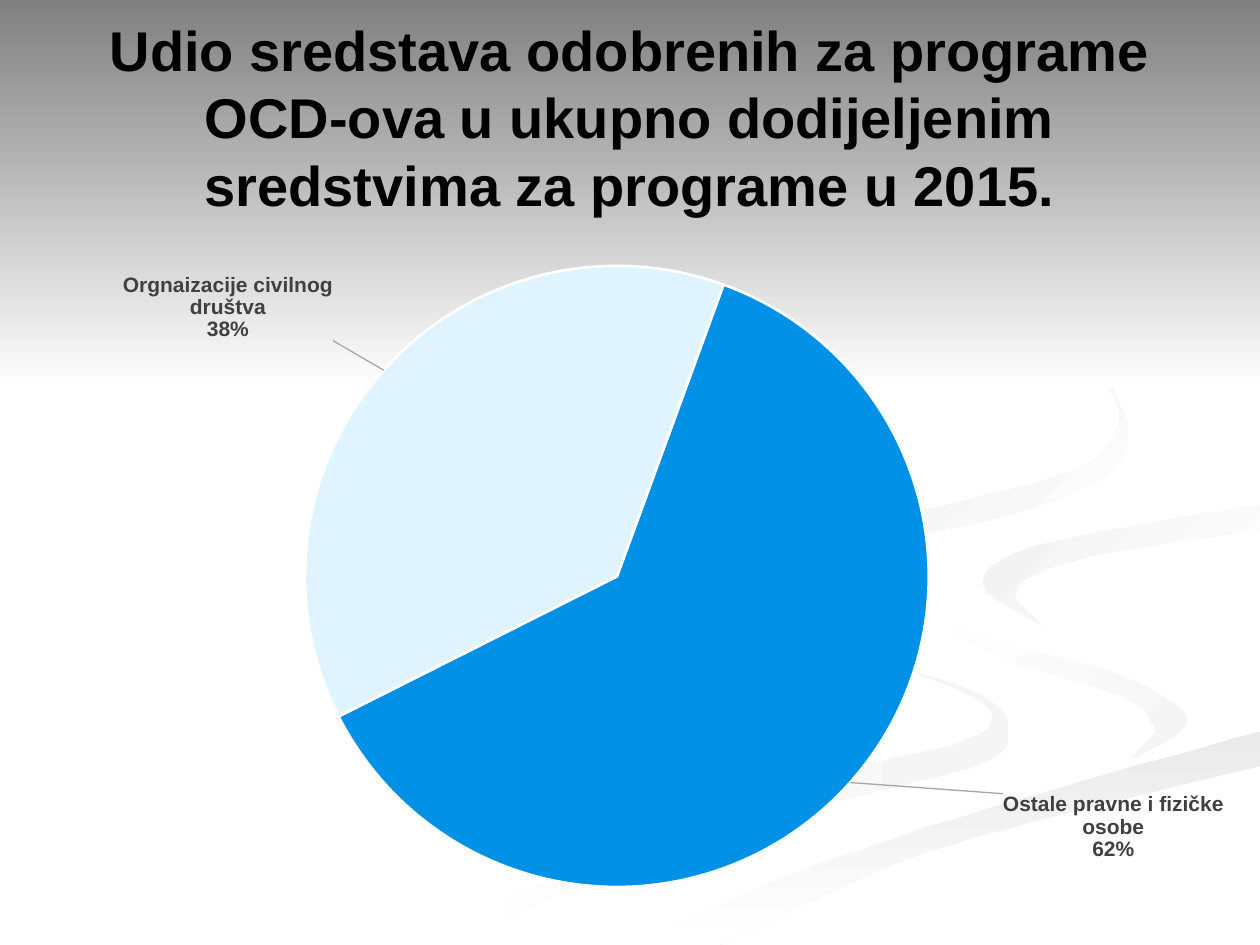
import pptx
import pptx.chart.data
import pptx.dml.color
import pptx.enum.chart
import pptx.enum.text
import pptx.oxml
import pptx.oxml.ns
import pptx.util

Pt = pptx.util.Pt
RGBColor = pptx.dml.color.RGBColor
qn = pptx.oxml.ns.qn

BLACK = RGBColor(0x00, 0x00, 0x00)
WHITE = RGBColor(0xFF, 0xFF, 0xFF)
HEADER_GREY = RGBColor(0x80, 0x80, 0x80)
LABEL_GREY = RGBColor(0x40, 0x40, 0x40)
MIST = RGBColor(0xF5, 0xF5, 0xF5)
SILVER = RGBColor(0xEA, 0xEA, 0xEA)
PEARL = RGBColor(0xF1, 0xF1, 0xF1)
ASH = RGBColor(0xED, 0xED, 0xED)
BLUE = RGBColor(0x00, 0x90, 0xE6)
PALE_BLUE = RGBColor(0xE0, 0xF4, 0xFF)

PAGE_WIDTH, PAGE_HEIGHT, HEADER_HEIGHT = 720, 540, 222

TITLE = ("Udio sredstava odobrenih za programe OCD-ova u ukupno "
         "dodijeljenim sredstvima za programe u 2015.")

# Category, share, slice colour, label shift as a fraction of the chart
SHARES = [
    ("Ostale pravne i fizičke osobe", 62, BLUE, (0.13, 0.01)),
    ("Orgnaizacije civilnog društva", 38, PALE_BLUE, (-0.04, -0.04)),
]

# Background ribbons, back to front: first colour, last colour, angle, smooth edges
RIBBONS = [
    (WHITE, MIST, 0, [
        [(414, 330), (440, 359), (524, 385), (565, 405), (552, 423), (469, 446), (216, 540)],
        [(260, 540), (359, 495), (487, 456), (562, 436), (576, 418), (562, 398), (491, 374)]]),
    (WHITE, MIST, 45, [
        [(521, 334), (536, 353), (639, 385), (679, 410), (644, 436)],
        [(661, 418), (642, 398), (574, 377), (528, 351)]]),
    (SILVER, WHITE, 90, [
        [(362, 540), (454, 499), (574, 459), (720, 418)],
        [(720, 438), (591, 469), (500, 498), (411, 540)]]),
    (WHITE, WHITE, 0, [
        [(343, 540), (477, 481), (667, 427), (679, 410), (639, 385), (558, 362), (522, 334),
         (582, 300), (720, 279)],
        [(720, 289), (612, 307), (563, 331), (588, 354), (720, 387)],
        [(720, 418), (574, 459), (454, 499), (362, 540)]]),
    (PEARL, WHITE, 45, [
        [(595, 357), (562, 335), (583, 315), (646, 301), (720, 289)],
        [(720, 302), (632, 316), (588, 330), (580, 342)]]),
    (ASH, WHITE, 45, [
        [(634, 222), (640, 241), (620, 266), (549, 287), (443, 309), (415, 333), (448, 360)],
        [(427, 338), (449, 320), (566, 297), (631, 272), (644, 248), (636, 222)]]),
]


def smooth_edge(points, steps=6):
    """Return points along a Catmull-Rom curve through the given points."""
    padded = [points[0], *points, points[-1]]
    curve = []
    for before, start, end, after in zip(padded, padded[1:], padded[2:], padded[3:]):
        for t in (step / steps for step in range(steps)):
            curve.append(tuple(
                b + (c - a) * t / 2 + (2 * a - 5 * b + 4 * c - d) * t ** 2 / 2
                + (3 * b - a - 3 * c + d) * t ** 3 / 2
                for a, b, c, d in zip(before, start, end, after)))
    return curve + [points[-1]]


def format_font(font, size, color, bold=False, name="Arial"):
    font.size, font.bold, font.name = Pt(size), bold, name
    font.color.rgb = color


def write_text(box, text, align=pptx.enum.text.PP_ALIGN.CENTER, **font_format):
    para = box.text_frame.paragraphs[0]
    para.alignment = align
    span = para.add_run()
    span.text = text
    format_font(span.font, **font_format)


def add_gradient_outline(page, first, last, angle, points):
    builder = page.shapes.build_freeform(*points[0], scale=Pt(1))
    builder.add_line_segments(points[1:], close=True)
    shape = builder.convert_to_shape()
    shape.shadow.inherit = False
    shape.line.fill.background()
    if first == last:
        shape.fill.solid()
        shape.fill.fore_color.rgb = first
        return
    shape.fill.gradient()
    shape.fill.gradient_angle = -angle % 360  # the library counts anticlockwise
    for stop, color in zip(shape.fill.gradient_stops, (first, last)):
        stop.color.rgb = color


def add_background(page):
    for first, last, angle, edges in RIBBONS:
        outline = [point for edge in edges for point in smooth_edge(edge)]
        add_gradient_outline(page, first, last, angle, outline)
    band = [(0, 0), (0, HEADER_HEIGHT), (PAGE_WIDTH, HEADER_HEIGHT), (PAGE_WIDTH, 0)]
    add_gradient_outline(page, HEADER_GREY, WHITE, 90, band)


def add_title(page):
    title = page.shapes.title
    title.left, title.top, title.width, title.height = Pt(36), Pt(21.6), Pt(648), Pt(90)
    frame = title.text_frame
    frame.word_wrap = True
    frame.auto_size = pptx.enum.text.MSO_AUTO_SIZE.NONE
    frame.vertical_anchor = pptx.enum.text.MSO_ANCHOR.MIDDLE
    write_text(title, TITLE, size=32, color=BLACK, bold=True)
    title.element.getparent().append(title.element)  # bring above the background


def chart_xml(tag, content):
    return pptx.oxml.parse_xml(
        f'<c:{tag} {pptx.oxml.ns.nsdecls("c", "a")}>{content}</c:{tag}>')


def manual_layout(**values):
    content = "".join(f'<c:{key} val="{value}"/>' for key, value in values.items())
    return chart_xml("layout", f"<c:manualLayout>{content}</c:manualLayout>")


def format_slice(point, color):
    point.format.fill.solid()
    point.format.fill.fore_color.rgb = color
    point.format.line.color.rgb = WHITE
    point.format.line.width = Pt(1.5)
    label = point.data_label
    format_font(label.font, 12, LABEL_GREY, bold=True)
    label.position = pptx.enum.chart.XL_LABEL_POSITION.OUTSIDE_END


def add_share_chart(page):
    data = pptx.chart.data.CategoryChartData()
    data.categories = [share[0] for share in SHARES]
    data.add_series("Series 1", [share[1] for share in SHARES])
    chart = page.shapes.add_chart(pptx.enum.chart.XL_CHART_TYPE.PIE, Pt(65.5), Pt(151.2),
                                  Pt(648), Pt(356.4), data).chart
    chart.has_legend = chart.has_title = False
    format_font(chart.font, 10, BLACK, name="Times New Roman")
    plot = chart.plots[0]
    plot.vary_by_categories = True
    series = plot.series[0]
    for index, share in enumerate(SHARES):
        format_slice(series.points[index], share[2])

    # Label content, shifts and leader lines
    labels = series.data_labels._element
    for node, (_, _, _, (shift_x, shift_y)) in zip(labels.findall(qn("c:dLbl")), SHARES):
        node.find(qn("c:idx")).addnext(manual_layout(x=shift_x, y=shift_y))
        for flag, value in (("showVal", 0), ("showCatName", 1), ("showPercent", 1)):
            node.find(qn("c:" + flag)).set("val", str(value))
        node.append(chart_xml("separator", "\n"))
    labels.find(qn("c:showLeaderLines")).addnext(chart_xml(
        "leaderLines", '<c:spPr><a:ln w="9525"><a:solidFill><a:srgbClr val="A6A6A6"/>'
        "</a:solidFill></a:ln></c:spPr>"))

    # Pie position and rotation
    area = chart._chartSpace.chart.plotArea
    for old in area.findall(qn("c:layout")):
        area.remove(old)
    area.insert(0, manual_layout(layoutTarget="inner", xMode="edge", yMode="edge",
                                 x=0.055, y=0, w=0.776, h=1))
    pie = area.find(qn("c:pieChart"))
    for old in pie.findall(qn("c:firstSliceAng")):
        pie.remove(old)
    rotation = chart_xml("firstSliceAng", "")
    rotation.set("val", "20")
    pie.append(rotation)


def main():
    deck = pptx.Presentation()
    deck.slide_width, deck.slide_height = Pt(PAGE_WIDTH), Pt(PAGE_HEIGHT)
    page = deck.slides.add_slide(deck.slide_layouts[5])
    add_background(page)
    add_title(page)
    add_share_chart(page)
    deck.save("out.pptx")


if __name__ == "__main__":
    main()
